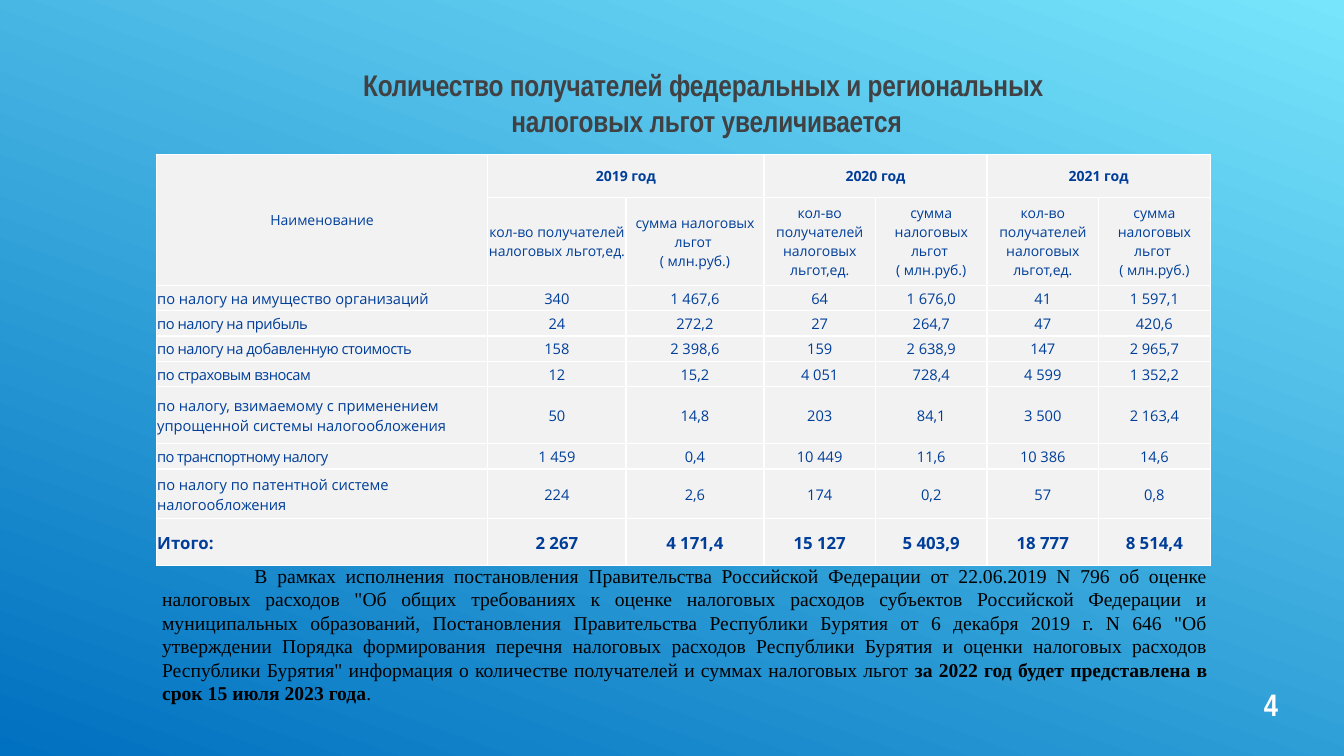
from dataclasses import dataclass, field

from lxml.etree import SubElement
from pptx import Presentation
from pptx.dml.color import RGBColor
from pptx.enum.text import MSO_ANCHOR, MSO_AUTO_SIZE, PP_ALIGN
from pptx.oxml.ns import qn
from pptx.util import Pt

NAVY = "003E9A"
WHITE = "FFFFFF"
CELL_GREY = "F2F2F2"
COLUMN_WIDTHS = [236.9] + [98.6] * 2 + [79.7] * 4
HEADER_HEIGHTS = [31, 62.6]
YEARS = ["2019 год", "2020 год", "2021 год"]
MEASURES = ["кол-во получателей налоговых льгот,ед.", "сумма налоговых льгот \v( млн.руб.)"]


@dataclass
class Style:
    size: float
    name: str
    color: str
    bold: bool = False
    spacing: float = 0


@dataclass
class TaxRow:
    label: str
    values: list[str]
    height: float = 18.1
    label_spacing: float = 0
    size: float = 10.5
    bold: bool = False


@dataclass
class TextBlock:
    box: tuple[float, float, float, float]
    paragraphs: list[list[tuple[str, Style]]]
    align: PP_ALIGN = PP_ALIGN.LEFT
    indent: float = 0
    frame: dict = field(default_factory=dict)


TITLE_STYLE = Style(21.3, "Arial Narrow", "414043", True, -0.1)
NOTE_STYLE = Style(14, "Times New Roman", "000000")
NOTE_BOLD = Style(14, "Times New Roman", "000000", True)
NUMBER_STYLE = Style(22.2, "Arial Narrow", WHITE, True)

TITLE = TextBlock(
    (131.8, 40.3, 745.9, 66.2),
    [[("Количество получателей федеральных и региональных ", TITLE_STYLE)],
     [("налоговых льгот увеличивается", TITLE_STYLE)]],
    PP_ALIGN.CENTER,
    frame={"vertical_anchor": MSO_ANCHOR.MIDDLE, "margin_left": 0, "margin_right": 0,
           "margin_top": 0, "margin_bottom": 0, "auto_size": MSO_AUTO_SIZE.NONE},
)
NOTE = TextBlock(
    (108.7, 398.9, 761, 108.7),
    [[("В рамках исполнения постановления Правительства Российской Федерации от 22.06.2019 N 796 "
       "об оценке налоговых расходов \"Об общих требованиях к оценке налоговых расходов субъектов "
       "Российской Федерации и муниципальных образований, Постановления Правительства Республики "
       "Бурятия от 6 декабря 2019 г. N 646 \"Об утверждении Порядка формирования перечня налоговых "
       "расходов Республики Бурятия и оценки налоговых расходов Республики Бурятия\" информация о "
       "количестве получателей и суммах налоговых льгот ", NOTE_STYLE),
      ("за 2022 год будет представлена в срок 15 июля 2023 года", NOTE_BOLD),
      (".", NOTE_STYLE)]],
    PP_ALIGN.JUSTIFY,
    indent=66,
    frame={"auto_size": MSO_AUTO_SIZE.SHAPE_TO_FIT_TEXT},
)
PAGE_NUMBER = TextBlock((895.7, 486, 35.3, 33.1), [[("4", NUMBER_STYLE)]])

TAX_ROWS = [
    TaxRow("по налогу на имущество организаций",
           ["340", "1 467,6", "64", "1 676,0", "41", "1 597,1"]),
    TaxRow("по налогу на прибыль",
           ["24", "272,2", "27", "264,7", "47", "420,6"], label_spacing=-0.3),
    TaxRow("по налогу на добавленную стоимость",
           ["158", "2 398,6", "159", "2 638,9", "147", "2 965,7"], label_spacing=-0.3),
    TaxRow("по страховым взносам",
           ["12", "15,2", "4 051", "728,4", "4 599", "1 352,2"], label_spacing=-0.3),
    TaxRow("по налогу, взимаемому с применением упрощенной системы налогообложения",
           ["50", "14,8", "203", "84,1", "3 500", "2 163,4"], height=40.8),
    TaxRow("по транспортному налогу",
           ["1 459", "0,4", "10 449", "11,6", "10 386", "14,6"], label_spacing=-0.4),
    TaxRow("по налогу по патентной системе налогообложения",
           ["224", "2,6", "174", "0,2", "57", "0,8"], height=35.6),
    TaxRow("Итого:", ["2 267", "4 171,4", "15 127", "5 403,9", "18 777", "8 514,4"],
           height=33.4, size=12, bold=True),
]


def paint(color_format, hex_color: str) -> None:
    color_format.rgb = RGBColor.from_string(hex_color)


def apply(target, values: dict) -> None:
    for attribute, value in values.items():
        setattr(target, attribute, value)


def format_run(run, style: Style) -> None:
    apply(run.font, {"size": Pt(style.size), "name": style.name, "bold": style.bold})
    paint(run.font.color, style.color)
    if style.spacing:
        run._r.get_or_add_rPr().set("spc", str(round(style.spacing * 100)))


def fill_block(shape, block: TextBlock) -> None:
    apply(shape, dict(zip(("left", "top", "width", "height"), map(Pt, block.box))))
    frame = shape.text_frame
    apply(frame, {"word_wrap": True, **block.frame})
    for index, pieces in enumerate(block.paragraphs):
        paragraph = frame.add_paragraph() if index else frame.paragraphs[0]
        paragraph.alignment = block.align
        if block.indent:
            paragraph._p.get_or_add_pPr().set("indent", str(Pt(block.indent)))
        for text, style in pieces:
            run = paragraph.add_run()
            run.text = text
            format_run(run, style)


def add_block(slide, block: TextBlock) -> None:
    fill_block(slide.shapes.add_textbox(*map(Pt, block.box)), block)


def format_cell(cell) -> None:
    apply(cell, {"margin_left": Pt(0.72), "margin_right": Pt(0.72), "margin_top": Pt(0.72),
                 "margin_bottom": 0, "vertical_anchor": MSO_ANCHOR.MIDDLE})
    properties = cell._tc.get_or_add_tcPr()
    for side in ("lnL", "lnR", "lnT", "lnB"):
        border = SubElement(properties, qn(f"a:{side}"), w=str(Pt(1)))
        solid = SubElement(border, qn("a:solidFill"))
        SubElement(solid, qn("a:srgbClr"), val=WHITE)
    cell.fill.solid()
    paint(cell.fill.fore_color, CELL_GREY)


def write_cell(cell, text: str, style: Style, align: PP_ALIGN = PP_ALIGN.CENTER) -> None:
    cell.text = text
    paragraph = cell.text_frame.paragraphs[0]
    paragraph.alignment = align
    for run in paragraph.runs:
        format_run(run, style)


def add_benefits_table(slide) -> None:
    heights = HEADER_HEIGHTS + [row.height for row in TAX_ROWS]
    frame = slide.shapes.add_table(len(heights), len(COLUMN_WIDTHS), Pt(111.6), Pt(110.2),
                                   Pt(sum(COLUMN_WIDTHS)), Pt(sum(heights)))
    table = frame.table
    apply(table, {"first_row": False, "horz_banding": False})
    for column, width in zip(table.columns, COLUMN_WIDTHS):
        column.width = Pt(width)
    for row, height in zip(table.rows, heights):
        row.height = Pt(height)
    for cell in table.iter_cells():
        format_cell(cell)

    header = Style(10, "Open Sans", NAVY)
    year_header = Style(10, "Open Sans", NAVY, True)
    table.cell(0, 0).merge(table.cell(1, 0))
    write_cell(table.cell(0, 0), "Наименование", header)
    for index, year in enumerate(YEARS):
        first = 1 + index * len(MEASURES)
        table.cell(0, first).merge(table.cell(0, first + 1))
        write_cell(table.cell(0, first), year, year_header)
        for offset, measure in enumerate(MEASURES):
            write_cell(table.cell(1, first + offset), measure, header)

    for index, tax in enumerate(TAX_ROWS, start=len(HEADER_HEIGHTS)):
        label_style = Style(tax.size, "Open Sans", NAVY, tax.bold, tax.label_spacing)
        value_style = Style(tax.size, "Open Sans", NAVY, tax.bold)
        write_cell(table.cell(index, 0), tax.label, label_style, PP_ALIGN.LEFT)
        for column, value in enumerate(tax.values, start=1):
            write_cell(table.cell(index, column), value, value_style)


def main() -> None:
    presentation = Presentation()
    apply(presentation, {"slide_width": Pt(960), "slide_height": Pt(540)})
    slide = presentation.slides.add_slide(presentation.slide_layouts[5])
    backdrop = slide.background.fill
    backdrop.gradient()
    backdrop.gradient_angle = 70
    for stop, (position, color) in zip(backdrop.gradient_stops, [(0, "0070C0"), (1, "77E5FB")]):
        stop.position = position
        paint(stop.color, color)
    fill_block(slide.shapes.title, TITLE)
    add_benefits_table(slide)
    for block in (NOTE, PAGE_NUMBER):
        add_block(slide, block)
    presentation.save("out.pptx")


if __name__ == "__main__":
    main()
